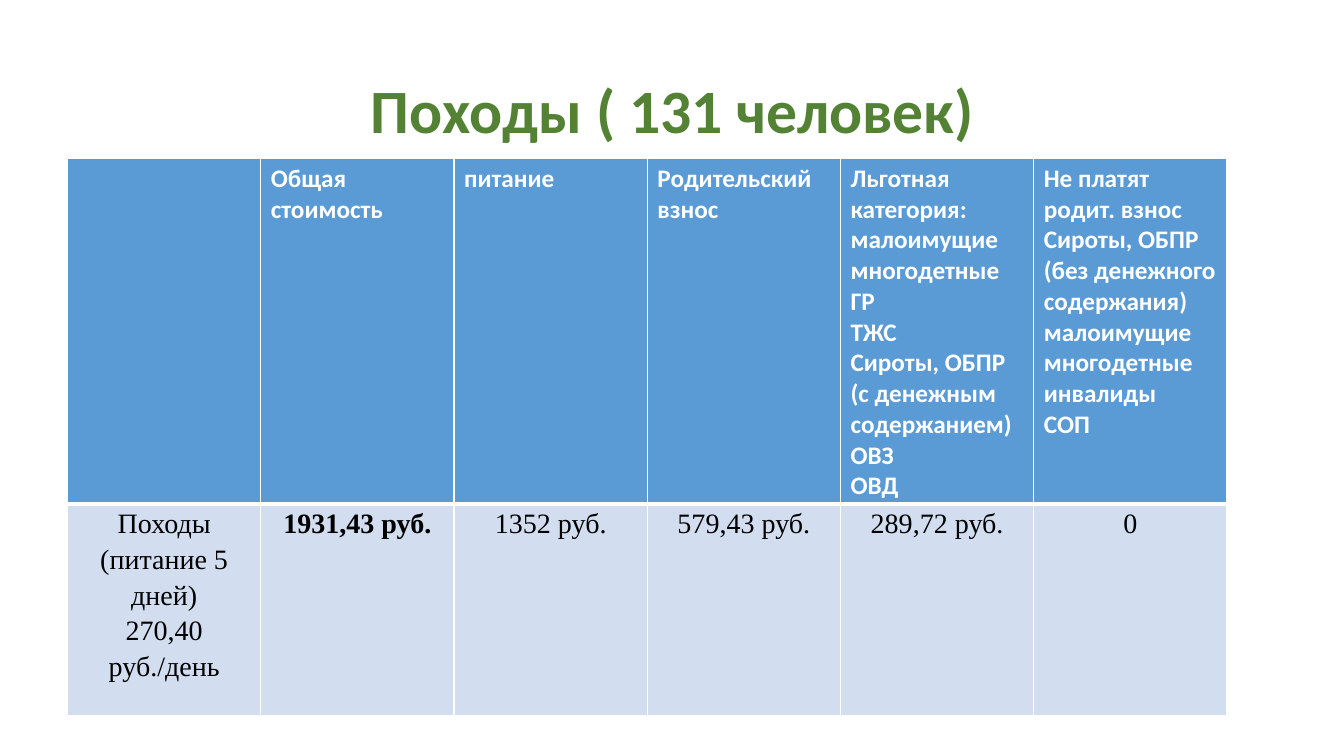
"""Build the slide with the cost table for the hikes."""
from dataclasses import dataclass

from lxml.etree import SubElement
from pptx import Presentation
from pptx.dml.color import RGBColor
from pptx.enum.text import MSO_ANCHOR, PP_ALIGN
from pptx.oxml.ns import qn
from pptx.util import Inches, Pt


@dataclass(frozen=True)
class Theme:
    title: str = "548235"
    header: str = "5B9BD5"
    body: str = "D2DEEF"
    white: str = "FFFFFF"
    black: str = "000000"
    sans: str = "Calibri"
    serif: str = "Times New Roman"
    title_size: int = 44
    header_size: int = 18
    body_size: int = 20


theme = Theme()


def add_run(p, text, font, size, color, bold):
    r = p.add_run()
    r.text = text
    r.font.name = font
    r.font.size = Pt(size)
    r.font.bold = bold
    r.font.color.rgb = RGBColor.from_string(color)


def add_border(cell, side, width):
    ln = SubElement(cell._tc.get_or_add_tcPr(), qn(f"a:ln{side}"), w=str(Pt(width)))
    SubElement(SubElement(ln, qn("a:solidFill")), qn("a:srgbClr"), val=theme.white)


headers = [
    [],
    ["Общая стоимость"],
    ["питание"],
    ["Родительский взнос"],
    ["Льготная категория:", "малоимущие", "многодетные", "ГР", "ТЖС",
     "Сироты, ОБПР (с денежным содержанием)", "ОВЗ", "ОВД"],
    ["Не платят родит. взнос", "Сироты, ОБПР (без денежного содержания)",
     "малоимущие многодетные", "инвалиды", "СОП"],
]
costs = [
    ["Походы (питание 5 дней)", "270,40 руб./день"],
    ["1931,43 руб."],
    ["1352 руб."],
    ["579,43 руб."],
    ["289,72 руб."],
    ["0"],
]
total_column = 1

prs = Presentation()
prs.slide_width = Inches(13.33)
prs.slide_height = Inches(7.5)
s = prs.slides.add_slide(prs.slide_layouts[6])

title = s.shapes.add_textbox(Inches(0.92), Inches(0.4), Inches(11.5), Inches(1.45))
tf = title.text_frame
tf.word_wrap = True
tf.vertical_anchor = MSO_ANCHOR.MIDDLE
p = tf.paragraphs[0]
p.alignment = PP_ALIGN.CENTER
p.line_spacing = 0.9
add_run(p, "Походы ( 131 человек)", theme.sans, theme.title_size, theme.title, True)

table = s.shapes.add_table(
    2, len(headers), Inches(0.67), Inches(1.57), Inches(11.5), Inches(5.53)).table
for column in table.columns:
    column.width = Inches(11.5 / len(headers))
table.rows[0].height = Inches(3.43)
table.rows[1].height = Inches(2.1)

for row, texts in enumerate([headers, costs]):
    is_header = row == 0
    for col, lines in enumerate(texts):
        cell = table.cell(row, col)
        borders = {"L": 1, "R": 1, "T": 1 if is_header else 3, "B": 3 if is_header else 1}
        for side, width in borders.items():
            add_border(cell, side, width)
        cell.fill.solid()
        cell.fill.fore_color.rgb = RGBColor.from_string(
            theme.header if is_header else theme.body)
        if not is_header:
            cell.margin_left = cell.margin_right = Inches(0.07)
            cell.margin_top = cell.margin_bottom = Inches(0)
        tf = cell.text_frame
        for i, line in enumerate(lines):
            p = tf.add_paragraph() if i else tf.paragraphs[0]
            if is_header:
                add_run(p, line, theme.sans, theme.header_size, theme.white, True)
            else:
                p.alignment = PP_ALIGN.CENTER
                p.line_spacing = 1.15
                add_run(p, line, theme.serif, theme.body_size, theme.black,
                        col == total_column)

prs.save("out.pptx")
